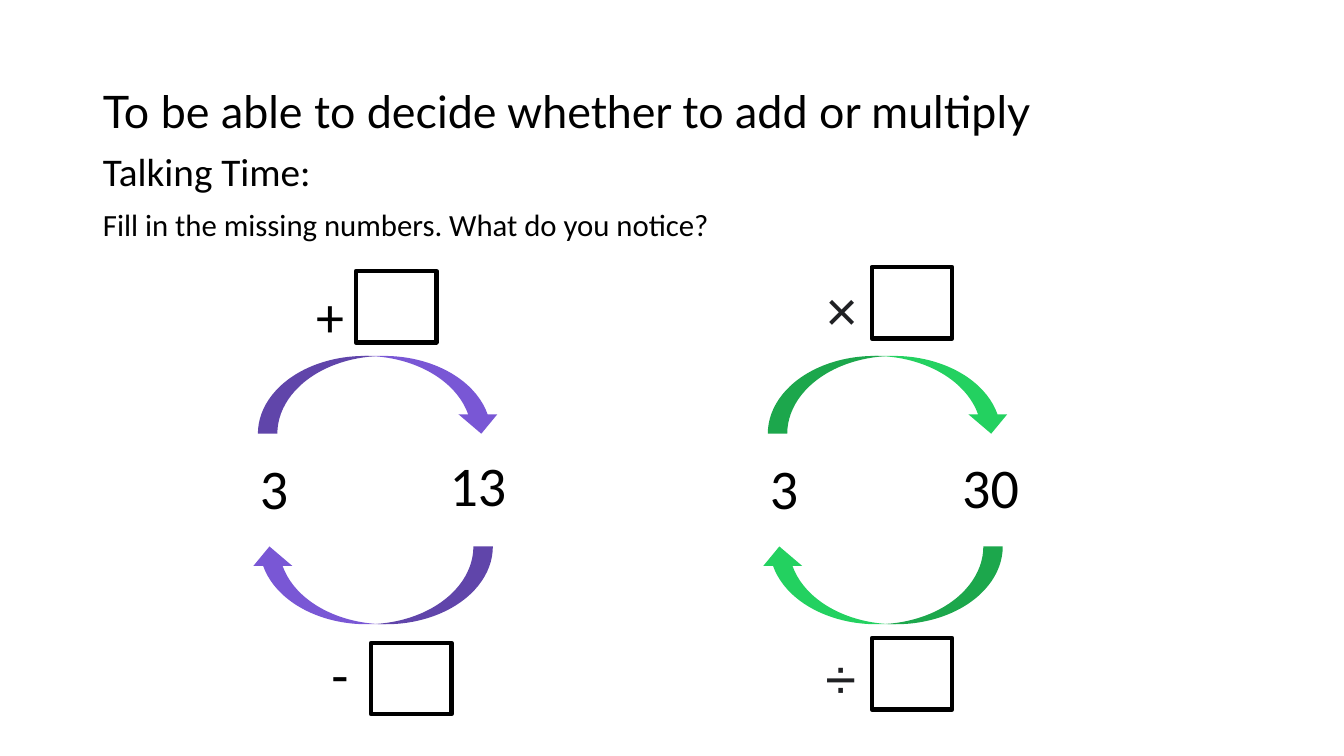
import pptx
import pptx.util
import pptx.dml.color
import pptx.enum.shapes
import pptx.enum.text
import pptx.oxml.ns
import lxml.etree

Cm = pptx.util.Cm
Pt = pptx.util.Pt
SHAPE = pptx.enum.shapes.MSO_SHAPE
ANCHOR = pptx.enum.text.MSO_ANCHOR
COLOURS = {
    "text": "000000",
    "sign": "202124",
    "addition": "7957D5",
    "multiplication": "23D160",
}


def colour(name):
    return pptx.dml.color.RGBColor.from_string(COLOURS[name])


def format_para(para, size, face="Calibri", tone="text"):
    para.alignment = pptx.enum.text.PP_ALIGN.LEFT
    for span in para.runs:
        span.font.size = Pt(size)
        span.font.name = face
        span.font.color.rgb = colour(tone)


def place(shape, left, top, width, height):
    shape.left, shape.top = Cm(left), Cm(top)
    shape.width, shape.height = Cm(width), Cm(height)


def add_heading(page, left, top, width, height):
    title = page.shapes.title
    place(title, left, top, width - 5.33, 3.68)
    title.text_frame.text = "To be able to decide whether to add or multiply"
    title.text_frame.vertical_anchor = ANCHOR.MIDDLE
    para = title.text_frame.paragraphs[0]
    para.line_spacing = 0.9
    format_para(para, 32, "Lato")

    body = page.placeholders[1]
    place(body, left, top + 2.71, width, height - 2.71)
    frame = body.text_frame
    frame.vertical_anchor = ANCHOR.TOP
    frame.text = "Talking Time:\nFill in the missing numbers. What do you notice?"
    for para, size, gap in zip(frame.paragraphs, (28, 22), (0, 10)):
        para.line_spacing = 0.9
        para.space_before = Pt(gap)
        settings = para._p.get_or_add_pPr()
        settings.set("marL", "0")
        settings.set("indent", "0")
        lxml.etree.SubElement(settings, pptx.oxml.ns.qn("a:buNone"))
        format_para(para, size)


def add_label(page, text, left, top, width, face="Calibri", tone="text"):
    box = page.shapes.add_textbox(Cm(left), Cm(top), Cm(width), Cm(1.96))
    frame = box.text_frame
    frame.word_wrap = False
    frame.auto_size = pptx.enum.text.MSO_AUTO_SIZE.SHAPE_TO_FIT_TEXT
    frame.text = text
    format_para(frame.paragraphs[0], 40, face, tone)


def add_arrow(page, left, top, rotation, tone):
    arrow = page.shapes.add_shape(
        SHAPE.CURVED_DOWN_ARROW, Cm(left), Cm(top), Cm(6.12), Cm(1.96))
    arrow.shadow.inherit = False
    arrow.rotation = rotation
    arrow.fill.solid()
    arrow.fill.fore_color.rgb = colour(tone)
    arrow.line.fill.background()


def add_answer_box(page, left, top):
    box = page.shapes.add_shape(SHAPE.RECTANGLE, Cm(left), Cm(top), Cm(2.03), Cm(1.8))
    box.shadow.inherit = False
    box.fill.background()
    box.line.color.rgb = colour("text")
    box.line.width = Pt(3)


def add_cycle(page, left, top, tone, end, signs, answers, face, sign_tone):
    add_arrow(page, left + 0.2, top + 2.24, 0, tone)
    add_arrow(page, left, top + 7.04, 180, tone)
    add_label(page, "3", left, top + 4.57, 1.37)
    text, across, down = end
    add_label(page, text, left + across, top + down, 2.24)
    for text, across, down, width in signs:
        add_label(page, text, left + across, top + down, width, face, sign_tone)
    for across, down in answers:
        add_answer_box(page, left + across, top + down)


def main():
    deck = pptx.Presentation()
    deck.slide_width, deck.slide_height = Cm(33.87), Cm(19.05)
    page = deck.slides.add_slide(deck.slide_layouts[1])
    add_heading(page, 2.34, 1.02, 29.72, 5.56)
    add_cycle(page, 6.3, 6.73, "addition", ("13", 4.78, 4.5),
              [("+", 1.42, 0.23, 1.37), ("-", 1.8, 9.27, 1.12)],
              [(2.67, 0.1), (3.05, 9.47)], "Calibri", "text")
    add_cycle(page, 19.15, 6.73, "multiplication", ("30", 4.85, 4.55),
              [("×", 1.4, 0.1, 1.75), ("÷", 1.4, 9.35, 1.68)],
              [(2.82, 0), (2.82, 9.35)], "Arial", "sign")
    deck.save("out.pptx")


if __name__ == "__main__":
    main()
